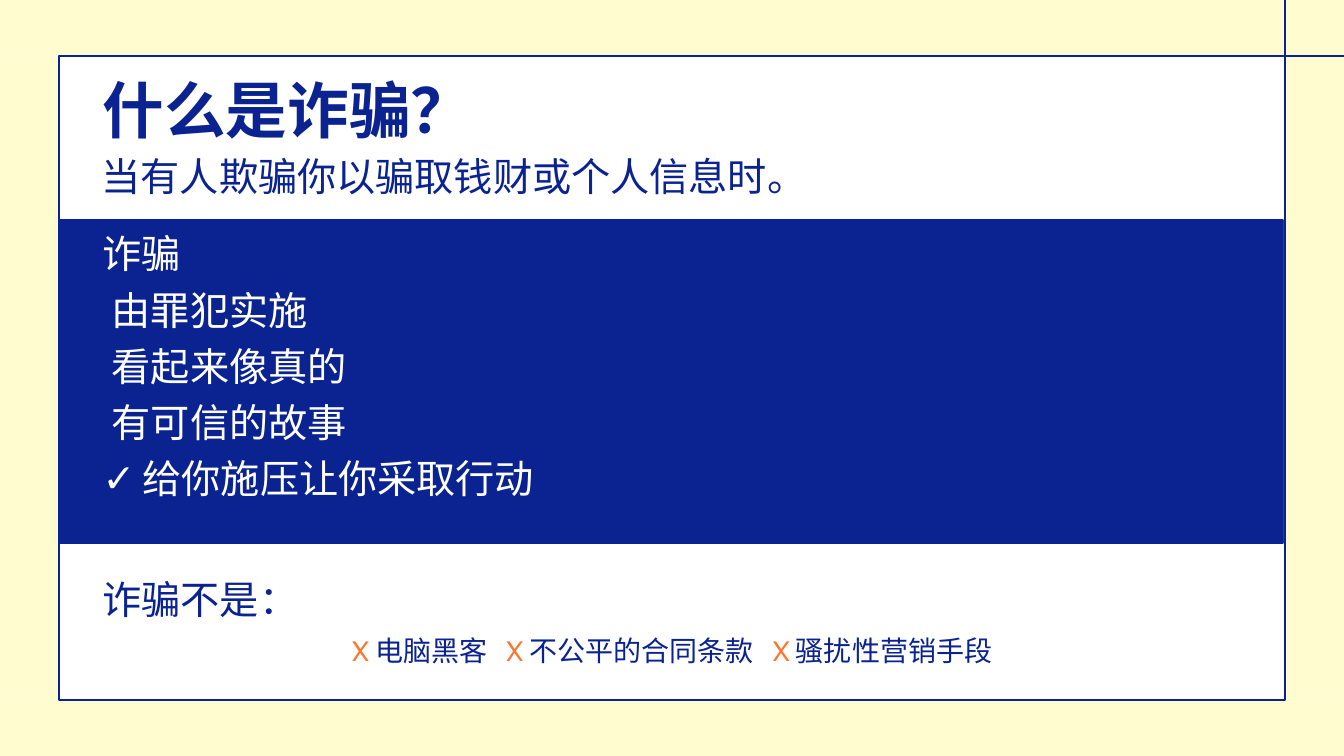
from pptx import Presentation
from pptx.dml.color import RGBColor
from pptx.enum.shapes import MSO_CONNECTOR as Connector, MSO_SHAPE as Shape
from pptx.enum.text import MSO_ANCHOR as Anchor, MSO_AUTO_SIZE as Fit, PP_ALIGN as Align
from pptx.oxml.ns import qn
from pptx.util import Pt
from lxml.etree import SubElement

BLUE, CREAM, WHITE, ORANGE = "0A2391", "FFFCCF", "FFFFFF", "FF742D"
WIDTH, HEIGHT = 960, 540
LEFT, TOP, RIGHT, BOTTOM = 42.5, 40.3, 918, 499.7
TEXT_LEFT, TEXT_WIDTH = 66.2, 828
LINE = 1.5
TRAITS = ["由罪犯实施", "看起来像真的", "有可信的故事", "给你施压让你采取行动"]
NOT_SCAMS = ["电脑黑客", "不公平的合同条款", "骚扰性营销手段"]


def colour(value):
    return RGBColor.from_string(value)


def apply(target, formats):
    for name, value in formats.items():
        setattr(target, name, value)


def place(item, left, top, width, height):
    apply(item, {"left": Pt(left), "top": Pt(top), "width": Pt(width), "height": Pt(height)})


def add_panel(page, left, top, width, height, fill=None, line=None):
    panel = page.shapes.add_shape(Shape.RECTANGLE, Pt(left), Pt(top), Pt(width), Pt(height))
    panel.shadow.inherit = False
    if fill:
        panel.fill.solid()
        panel.fill.fore_color.rgb = colour(fill)
    else:
        panel.fill.background()
    if line:
        panel.line.color.rgb = colour(line)
        panel.line.width = Pt(LINE)
    else:
        panel.line.fill.background()
    return panel


def add_rule(page, x1, y1, x2, y2):
    rule = page.shapes.add_connector(Connector.STRAIGHT, Pt(x1), Pt(y1), Pt(x2), Pt(y2))
    rule.line.color.rgb = colour(BLUE)
    rule.line.width = Pt(LINE)
    SubElement(rule._element.spPr, qn("a:effectLst"))


def add_span(para, text, size, fill, bold=False, spacing=0):
    span = para.add_run()
    span.text = text
    apply(span.font, {"name": "Cabin", "size": Pt(size), "bold": bold})
    span.font.color.rgb = colour(fill)
    if spacing:
        span.font._element.set("spc", str(spacing * 100))


def add_para(frame, first=False, align=Align.LEFT):
    para = frame.paragraphs[0] if first else frame.add_paragraph()
    apply(para, {"alignment": align, "line_spacing": 0.9, "space_before": Pt(0 if first else 10)})
    return para


def set_bullet(para, left, mark=None):
    properties = para._p.get_or_add_pPr()
    properties.set("marL", str(Pt(left)))
    properties.set("indent", str(-Pt(left) if mark else 0))
    if mark:
        SubElement(properties, qn("a:buChar"), char=mark)
    else:
        SubElement(properties, qn("a:buNone"))


def add_text(page, top, height, text, left=TEXT_LEFT):
    box = page.shapes.add_textbox(Pt(left), Pt(top), Pt(TEXT_WIDTH), Pt(height))
    box.text_frame.word_wrap = True
    add_span(add_para(box.text_frame, first=True), text, 28, BLUE)
    return box.text_frame


def fill_title(title):
    place(title, TEXT_LEFT, 28.8, TEXT_WIDTH, 104.4)
    title.text_frame.vertical_anchor = Anchor.MIDDLE
    add_span(add_para(title.text_frame, first=True), "什么是诈骗？", 44, BLUE, bold=True)


def fill_traits(body):
    place(body, TEXT_LEFT, 164.2, TEXT_WIDTH, 211)
    frame = body.text_frame
    apply(frame, {"vertical_anchor": Anchor.TOP, "auto_size": Fit.TEXT_TO_FIT_SHAPE})
    heading = add_para(frame, first=True)
    set_bullet(heading, 0)
    add_span(heading, "诈骗", 28, WHITE)
    for trait in TRAITS:
        para = add_para(frame)
        if trait == TRAITS[-1]:
            set_bullet(para, 28.5, "✓")
        else:
            set_bullet(para, 6.5)
        add_span(para, trait, 28, WHITE)


def add_not_scams(page):
    frame = add_text(page, 411.1, 85.7, "诈骗不是：")
    para = add_para(frame, align=Align.CENTER)
    for number, item in enumerate(NOT_SCAMS):
        if number:
            add_span(para, " ", 20, BLUE, spacing=9)
        add_span(para, "X ", 20, ORANGE)
        add_span(para, item, 20, BLUE)


def main():
    deck = Presentation()
    apply(deck, {"slide_width": Pt(WIDTH), "slide_height": Pt(HEIGHT)})
    page = deck.slides.add_slide(deck.slide_layouts[1])

    # Blue band behind the title and the list
    band = add_panel(page, LEFT, 157, 874, 231, BLUE, BLUE)
    page.shapes._spTree.insert(2, band._element)
    fill_title(page.shapes.title)
    fill_traits(page.placeholders[1])

    # Cream border and framed panel
    inner = BOTTOM - TOP
    add_panel(page, 0, 0, WIDTH, TOP, CREAM)
    add_panel(page, 0, BOTTOM, WIDTH, HEIGHT - BOTTOM, CREAM)
    add_panel(page, 0, TOP, LEFT, inner, CREAM)
    add_panel(page, RIGHT - 1, TOP, WIDTH - RIGHT + 1, inner, CREAM)
    add_panel(page, LEFT, TOP, RIGHT - LEFT, inner, line=BLUE)

    # Definition and counterexamples
    add_not_scams(page)
    add_text(page, 108.7, 44, "当有人欺骗你以骗取钱财或个人信息时。", left=65.5)

    # Corner lines running to the slide edges
    add_rule(page, RIGHT, 0, RIGHT, TOP)
    add_rule(page, RIGHT, TOP, WIDTH, TOP)

    deck.save("out.pptx")


if __name__ == "__main__":
    main()
